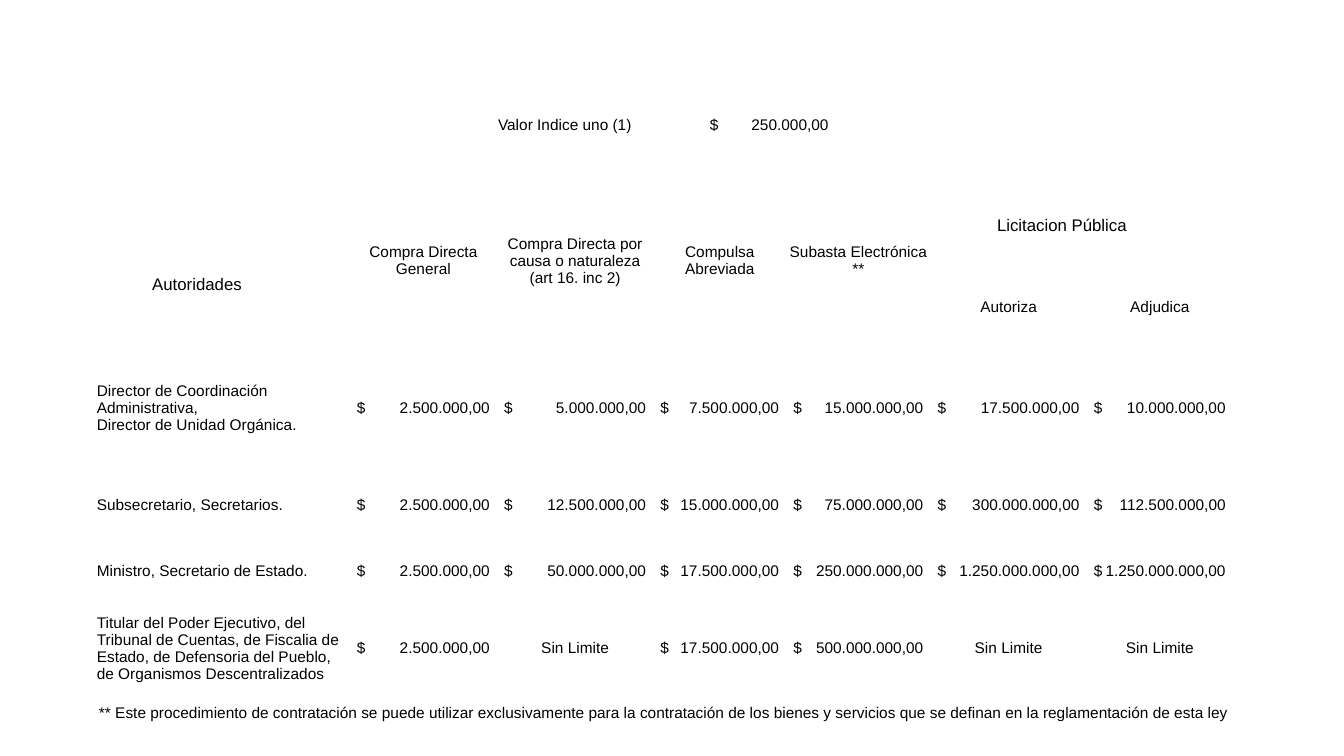
from lxml import etree
from pptx import Presentation
from pptx.dml.color import RGBColor
from pptx.enum.text import MSO_ANCHOR, PP_ALIGN
from pptx.oxml.ns import qn
from pptx.util import Inches, Pt

LEFT, CENTER = PP_ALIGN.LEFT, PP_ALIGN.CENTER
MIDDLE = MSO_ANCHOR.MIDDLE

BLACK = "000000"
INSET = 0.01
AMOUNT_INSET = 0.07
COLUMN_WIDTHS = [2.52, 1.46, 1.55, 1.32, 0.49, 0.94, 1.55, 1.45]
ROW_HEIGHTS = [0.56, 0.25, 0.66, 0.26, 0.25, 0.24, 0.22, 1.29, 0.64, 0.67, 0.86, 0.43]
HEADER_ROW, SUBHEADER_ROW, FIRST_AUTHORITY_ROW, NOTE_ROW = 2, 4, 7, 11
LIMIT_COLUMNS = [1, 2, 3, 4, 6, 7]

PROCEDURES = [
    "Compra Directa General",
    "Compra Directa por causa o naturaleza (art 16. inc 2)",
    "Compulsa Abreviada",
    "Subasta Electrónica\v**",
]
UNLIMITED = "Sin Limite"
AUTHORITIES = [
    ("Director de Coordinación Administrativa,\nDirector de Unidad Orgánica.",
     ["2.500.000,00", "5.000.000,00", "7.500.000,00",
      "15.000.000,00", "17.500.000,00", "10.000.000,00"]),
    ("Subsecretario, Secretarios.",
     ["2.500.000,00", "12.500.000,00", "15.000.000,00",
      "75.000.000,00", "300.000.000,00", "112.500.000,00"]),
    ("Ministro, Secretario de Estado.",
     ["2.500.000,00", "50.000.000,00", "17.500.000,00",
      "250.000.000,00", "1.250.000.000,00", "1.250.000.000,00"]),
    ("Titular del Poder Ejecutivo, del Tribunal de Cuentas, de Fiscalia de Estado, "
     "de Defensoria del Pueblo, de Organismos Descentralizados",
     ["2.500.000,00", UNLIMITED, "17.500.000,00", "500.000.000,00", UNLIMITED, UNLIMITED]),
]
NOTE = ("** Este procedimiento de contratación se puede utilizar exclusivamente para la "
        "contratación de los bienes y servicios que se definan en la reglamentación de esta ley")


def color(hex_value):
    return RGBColor.from_string(hex_value)


def add_right_tab(paragraph, position):
    tabs = etree.SubElement(paragraph._p.get_or_add_pPr(), qn("a:tabLst"))
    etree.SubElement(tabs, qn("a:tab"), pos=str(Inches(position)), algn="r")


def write(cell, text, align=LEFT, size=11, inset=INSET, tab=None):
    cell.text = text
    cell.margin_left = Inches(inset)
    for paragraph in cell.text_frame.paragraphs:
        paragraph.alignment = align
        if tab:
            add_right_tab(paragraph, tab)
        paragraph.font.name = "Arial"
        paragraph.font.size = Pt(size)
        paragraph.font.color.rgb = color(BLACK)


def write_amount(cell, amount, width, inset=AMOUNT_INSET):
    """Put the currency sign at the left and the amount at the right of the cell."""
    write(cell, "$\t" + amount, inset=inset, tab=width - inset - AMOUNT_INSET)


def clear_cell(cell):
    """Remove fill and padding, and keep an empty cell from stretching its row."""
    cell.fill.background()
    cell.vertical_anchor = MIDDLE
    cell.margin_left = cell.margin_right = cell.margin_top = Inches(INSET)
    cell.margin_bottom = 0
    etree.SubElement(cell.text_frame.paragraphs[0]._p, qn("a:endParaRPr"), sz="1100")


def merge(table, row, column, rows, columns):
    table.cell(row, column).merge(table.cell(row + rows - 1, column + columns - 1))


def add_index_value(table):
    for column, columns in ((0, 2), (3, 2), (5, 3)):
        merge(table, 0, column, 1, columns)
    merge(table, 1, 0, 1, len(COLUMN_WIDTHS))
    write(table.cell(0, 2), "Valor Indice uno (1)")
    write_amount(table.cell(0, 3), "250.000,00", sum(COLUMN_WIDTHS[3:5]), inset=0.56)


def add_headers(table):
    for column, procedure in enumerate(PROCEDURES, start=1):
        merge(table, HEADER_ROW, column, 5, 2 if column == 4 else 1)
        write(table.cell(HEADER_ROW, column), procedure, CENTER)
    write(table.cell(SUBHEADER_ROW, 0), "Autoridades", size=12, inset=0.56)
    merge(table, HEADER_ROW, 6, 2, 2)
    write(table.cell(HEADER_ROW, 6), "Licitacion Pública", size=12, inset=0.66)
    for column, stage in enumerate(["Autoriza", "Adjudica"], start=6):
        merge(table, SUBHEADER_ROW, column, 3, 1)
        write(table.cell(SUBHEADER_ROW, column), stage, CENTER)


def add_authorities(table):
    for row, (authority, limits) in enumerate(AUTHORITIES, start=FIRST_AUTHORITY_ROW):
        write(table.cell(row, 0), authority)
        merge(table, row, 4, 1, 2)
        for column, limit in zip(LIMIT_COLUMNS, limits):
            cell = table.cell(row, column)
            if limit == UNLIMITED:
                write(cell, limit, CENTER)
            else:
                width = sum(COLUMN_WIDTHS[4:6]) if column == 4 else COLUMN_WIDTHS[column]
                write_amount(cell, limit, width)


def add_limits_table(slide, left, top):
    frame = slide.shapes.add_table(
        len(ROW_HEIGHTS), len(COLUMN_WIDTHS), Inches(left), Inches(top),
        Inches(sum(COLUMN_WIDTHS)), Inches(sum(ROW_HEIGHTS)))
    table = frame.table
    table.first_row = table.horz_banding = False
    for column, width in zip(table.columns, COLUMN_WIDTHS):
        column.width = Inches(width)
    for row, height in zip(table.rows, ROW_HEIGHTS):
        row.height = Inches(height)
    for cell in table.iter_cells():
        clear_cell(cell)
    add_index_value(table)
    add_headers(table)
    add_authorities(table)
    merge(table, NOTE_ROW, 0, 1, len(COLUMN_WIDTHS))
    write(table.cell(NOTE_ROW, 0), NOTE, CENTER)


def main():
    presentation = Presentation()
    presentation.slide_width = Inches(13.33)
    presentation.slide_height = Inches(7.5)
    slide = presentation.slides.add_slide(presentation.slide_layouts[6])
    add_limits_table(slide, 0.95, 0.96)
    presentation.save("out.pptx")


if __name__ == "__main__":
    main()
